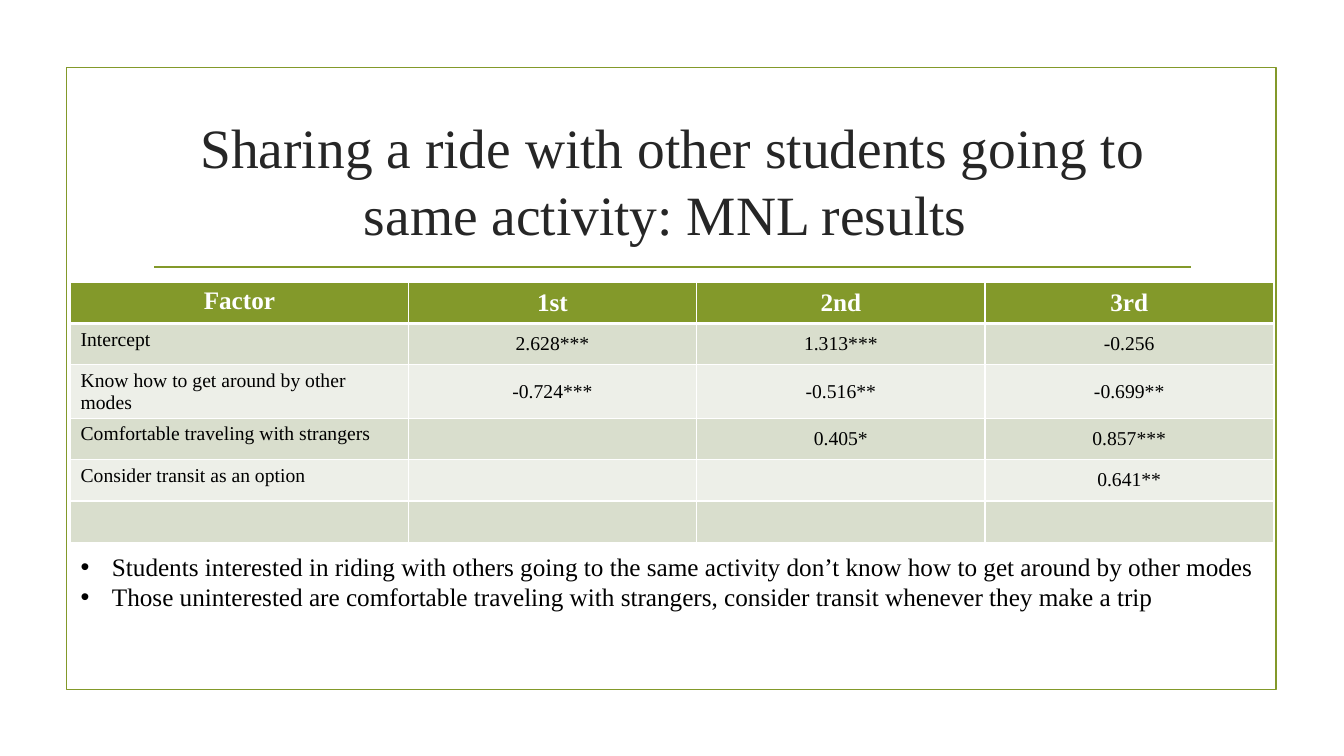
from lxml.etree import SubElement
from pptx import Presentation
from pptx.dml.color import RGBColor
from pptx.enum.shapes import MSO_CONNECTOR as Connector, MSO_SHAPE as Shape
from pptx.enum.text import MSO_ANCHOR as Anchor, MSO_AUTO_SIZE as AutoSize, PP_ALIGN as Align
from pptx.oxml.ns import qn
from pptx.util import Inches, Pt

TITLE = "Sharing a ride with other students going to same activity: MNL results "
RESULTS = [
    ("Factor", "1st", "2nd", "3rd"),
    ("Intercept", "2.628***", "1.313***", "-0.256"),
    ("Know how to get around by other modes", "-0.724***", "-0.516**", "-0.699**"),
    ("Comfortable traveling with strangers", "", "0.405*", "0.857***"),
    ("Consider transit as an option", "", "", "0.641**"),
    ("", "", "", ""),
]
FINDINGS = [
    "Students interested in riding with others going to the same activity don’t know how to get around by other modes",
    "Those uninterested are comfortable traveling with strangers, consider transit whenever they make a trip",
]
COLORS = {
    "green": "83992A", "odd": "D9DECD", "even": "EDEFE8",
    "white": "FFFFFF", "black": "000000", "title": "262626",
}
FONT = "Times New Roman"
COLUMN_WIDTHS = [3.35, 2.86, 2.86, 2.86]
ROW_HEIGHT = 0.41
FORMATS = {
    "title": {"size": Pt(39.6), "bold": False},
    "header": {"size": Pt(18), "bold": True},
    "cell": {"size": Pt(14), "bold": False},
    "finding": {"size": Pt(18), "bold": False},
}


def color(name):
    return RGBColor.from_string(COLORS[name])


def box(*lengths):
    return [Inches(length) for length in lengths]


def place(shape, *lengths):
    for name, length in zip(("left", "top", "width", "height"), box(*lengths)):
        setattr(shape, name, length)


def style(paragraph, format_name, color_name):
    paragraph.font.name = FONT
    paragraph.font.color.rgb = color(color_name)
    for name, value in FORMATS[format_name].items():
        setattr(paragraph.font, name, value)


def outline(shape):
    shape.line.color.rgb = color("green")
    shape.line.width = Pt(1.25)


def add_borders(cell, is_header):
    properties = cell._tc.get_or_add_tcPr()
    for index, side in enumerate(("lnL", "lnR", "lnT", "lnB")):
        width = 3 if is_header and side == "lnB" else 1
        border = properties.makeelement(qn(f"a:{side}"), {"w": str(Pt(width))})
        fill = SubElement(border, qn("a:solidFill"))
        SubElement(fill, qn("a:srgbClr"), val=COLORS["white"])
        properties.insert(index, border)


def add_frame(slide):
    frame = slide.shapes.add_shape(Shape.RECTANGLE, *box(0.66, 0.67, 12, 6.17))
    frame.shadow.inherit = False
    frame.fill.background()
    outline(frame)
    rule = slide.shapes.add_connector(Connector.STRAIGHT, *box(1.53, 2.65, 11.81, 2.65))
    SubElement(rule._element.spPr, qn("a:effectLst"))
    outline(rule)


def fill_title(title):
    place(title, 1.42, 1.07, 10.5, 1.43)
    frame = title.text_frame
    frame.text = TITLE
    frame.word_wrap = True
    frame.auto_size = AutoSize.NONE
    frame.vertical_anchor = Anchor.MIDDLE
    frame.paragraphs[0].alignment = Align.CENTER
    style(frame.paragraphs[0], "title", "title")


def add_results(slide):
    size = box(0.7, 2.8, sum(COLUMN_WIDTHS), ROW_HEIGHT * len(RESULTS))
    table = slide.shapes.add_table(len(RESULTS), len(COLUMN_WIDTHS), *size).table
    for column, width in zip(table.columns, COLUMN_WIDTHS):
        column.width = Inches(width)
    for row_index, values in enumerate(RESULTS):
        table.rows[row_index].height = Inches(ROW_HEIGHT)
        is_header = row_index == 0
        fill_name = "green" if is_header else "odd" if row_index % 2 else "even"
        for column_index, value in enumerate(values):
            is_factor = column_index == 0
            cell = table.cell(row_index, column_index)
            cell.text = value
            cell.fill.solid()
            cell.fill.fore_color.rgb = color(fill_name)
            cell.vertical_anchor = Anchor.TOP if is_factor else Anchor.MIDDLE
            paragraph = cell.text_frame.paragraphs[0]
            paragraph.alignment = Align.LEFT if is_factor and not is_header else Align.CENTER
            style(paragraph, "header" if is_header else "cell", "white" if is_header else "black")
            add_borders(cell, is_header)


def fill_findings(body):
    place(body, 0.7, 5.42, 11.94, 1.01)
    frame = body.text_frame
    frame.text = "\n".join(FINDINGS)
    frame.word_wrap = True
    frame.auto_size = AutoSize.NONE
    frame.vertical_anchor = Anchor.TOP
    for paragraph in frame.paragraphs:
        properties = paragraph._p.get_or_add_pPr()
        properties.set("marL", str(Inches(0.31)))
        properties.set("indent", str(Inches(-0.31)))
        SubElement(properties, qn("a:buFont"), typeface="Arial")
        SubElement(properties, qn("a:buChar"), char="•")
        paragraph.space_before = Pt(0)
        style(paragraph, "finding", "black")


def main():
    presentation = Presentation()
    presentation.slide_width, presentation.slide_height = box(13.33, 7.5)
    slide = presentation.slides.add_slide(presentation.slide_layouts[1])
    add_frame(slide)
    fill_title(slide.shapes.title)
    add_results(slide)
    fill_findings(slide.placeholders[1])
    presentation.save("out.pptx")


if __name__ == "__main__":
    main()
